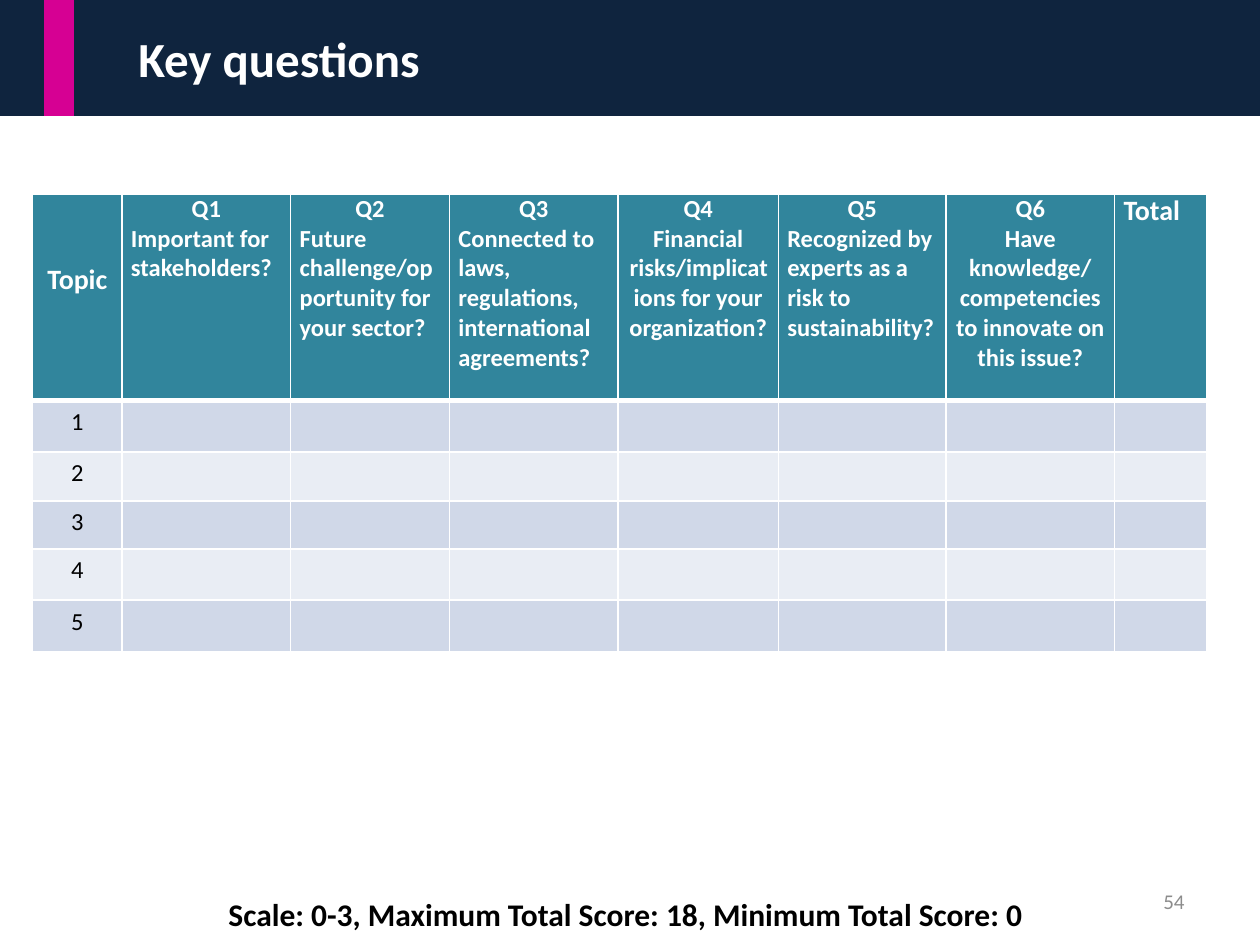
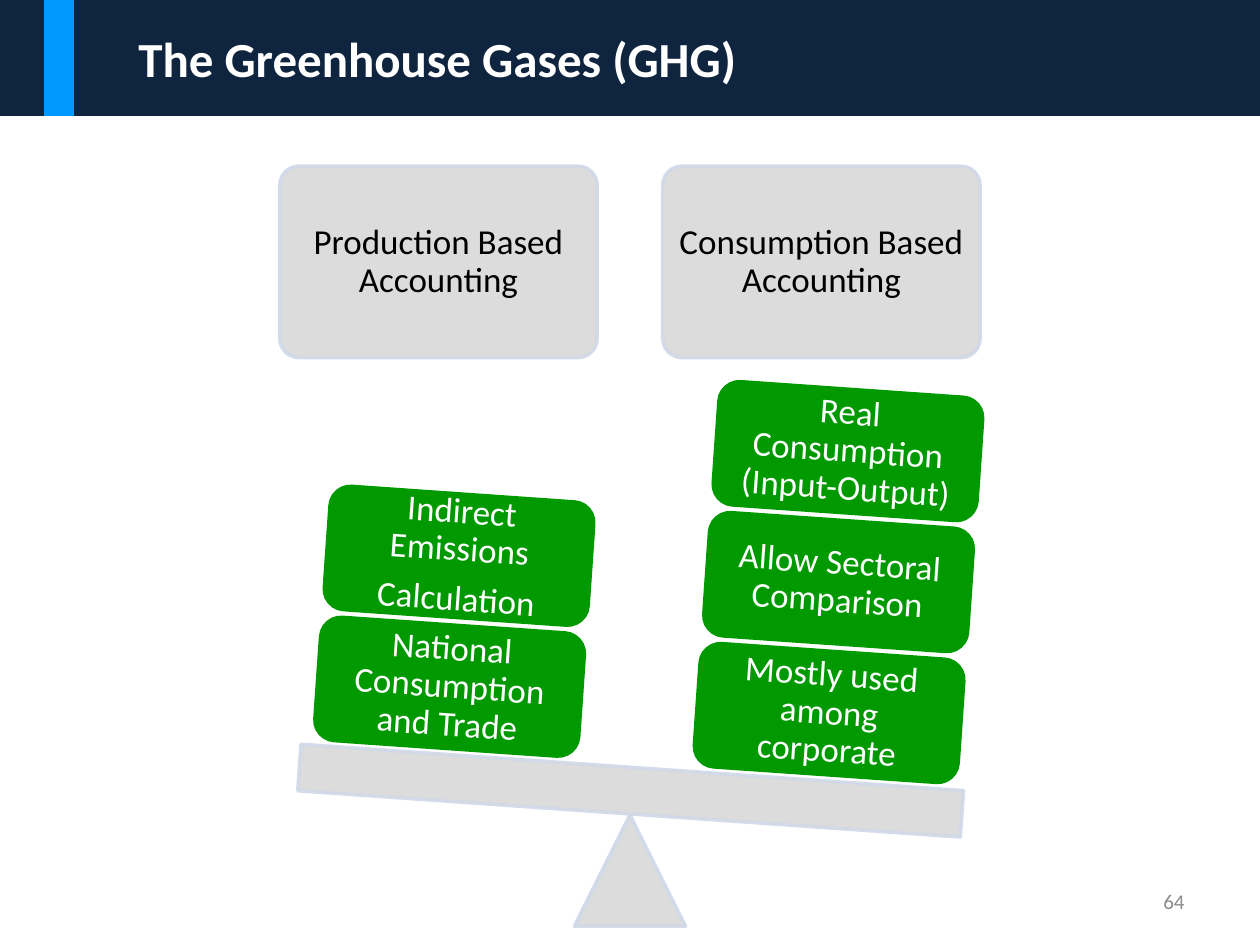
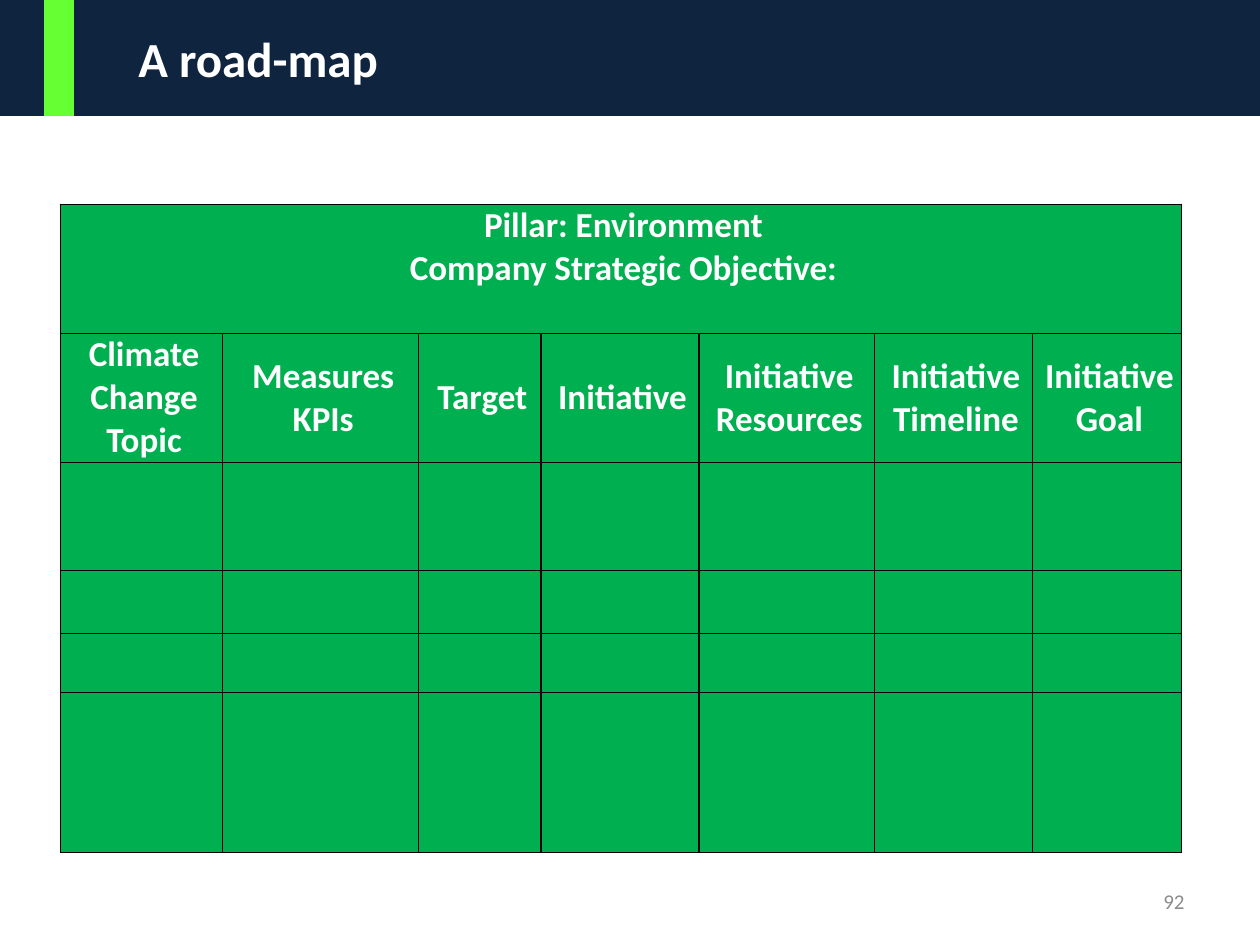
from lxml import etree
from pptx import Presentation
from pptx.dml.color import RGBColor
from pptx.enum.shapes import MSO_SHAPE
from pptx.enum.text import MSO_ANCHOR, PP_ALIGN
from pptx.oxml.ns import qn
from pptx.util import Cm, Pt

RECT = MSO_SHAPE.RECTANGLE
ROUNDED = MSO_SHAPE.ROUNDED_RECTANGLE
TRIANGLE = MSO_SHAPE.ISOSCELES_TRIANGLE
LEFT, CENTER, RIGHT = PP_ALIGN.LEFT, PP_ALIGN.CENTER, PP_ALIGN.RIGHT
TOP, MIDDLE = MSO_ANCHOR.TOP, MSO_ANCHOR.MIDDLE

FONT = "Calibri"
WHITE = RGBColor(0xFF, 0xFF, 0xFF)
BLACK = RGBColor(0x00, 0x00, 0x00)
NAVY = RGBColor(0x0F, 0x24, 0x3E)
GREY_TEXT = RGBColor(0x8C, 0x8C, 0x8C)
MAGENTA = RGBColor(0xD6, 0x00, 0x93)
SKY = RGBColor(0x00, 0x99, 0xFF)
LIME = RGBColor(0x66, 0xFF, 0x33)
TEAL = RGBColor(0x31, 0x85, 0x9C)
BAND_DARK = RGBColor(0xD0, 0xD8, 0xE8)
BAND_LIGHT = RGBColor(0xE9, 0xED, 0xF4)
SCALE_GREY = RGBColor(0xD9, 0xD9, 0xD9)
BLOCK_GREEN = RGBColor(0x00, 0x99, 0x00)
ROADMAP_GREEN = RGBColor(0x00, 0xB0, 0x50)

SLIDE_W, SLIDE_H = 25.4, 19.05
BAND_H = 2.34
TILT = 4


# Text and shapes
def write(frame, lines, size, color, bold=False, aligns=(CENTER,)):
    """Fill a frame; the last alignment carries on to the remaining lines."""
    frame.word_wrap = True
    for i, line in enumerate(lines):
        paragraph = frame.paragraphs[0] if i == 0 else frame.add_paragraph()
        paragraph.text = line
        paragraph.alignment = aligns[min(i, len(aligns) - 1)]
        font = paragraph.font
        font.name, font.size, font.bold = FONT, Pt(size), bold
        font.color.rgb = color


def set_margins(target, left, top, right, bottom):
    target.margin_left, target.margin_top = Cm(left), Cm(top)
    target.margin_right, target.margin_bottom = Cm(right), Cm(bottom)


def add_label(slide, box, text, size, color, bold=False, align=CENTER, anchor=TOP):
    frame = slide.shapes.add_textbox(*map(Cm, box)).text_frame
    frame.vertical_anchor = anchor
    write(frame, [text], size, color, bold, [align])


def add_solid(slide, kind, box, fill, line=None):
    shape = slide.shapes.add_shape(kind, *map(Cm, box))
    shape.shadow.inherit = False
    shape.fill.solid()
    shape.fill.fore_color.rgb = fill
    if line is None:
        shape.line.fill.background()
    else:
        shape.line.color.rgb = line
        shape.line.width = Pt(2)
    return shape


def add_scale_part(slide, kind, box):
    part = add_solid(slide, kind, box, SCALE_GREY, BAND_DARK)
    for color in part._element.spPr.iter(qn("a:srgbClr")):
        etree.SubElement(color, qn("a:alpha"), val="90000")
    return part


def write_in_block(block, lines, color):
    frame = block.text_frame
    frame.vertical_anchor = MIDDLE
    set_margins(frame, 0.2, 0.2, 0.2, 0.2)
    write(frame, lines, 20, color)
    for paragraph in frame.paragraphs:
        paragraph.line_spacing = 0.9
        paragraph.space_after = Pt(7)


# Tables
def add_grid(slide, left, top, widths, heights):
    frame = slide.shapes.add_table(len(heights), len(widths), Cm(left), Cm(top),
                                   Cm(sum(widths)), Cm(sum(heights)))
    table = frame.table
    table.first_row = table.horz_banding = False
    for column, width in zip(table.columns, widths):
        column.width = Cm(width)
    for row, height in zip(table.rows, heights):
        row.height = Cm(height)
    return table


def style_cell(cell, fill, border, top=1, bottom=1):
    properties = cell._tc.get_or_add_tcPr()
    for side, width in (("L", 1), ("R", 1), ("T", top), ("B", bottom)):
        line = etree.SubElement(properties, qn(f"a:ln{side}"), w=str(Pt(width)))
        paint = etree.SubElement(line, qn("a:solidFill"))
        etree.SubElement(paint, qn("a:srgbClr"), val=str(border))
    cell.fill.solid()
    cell.fill.fore_color.rgb = fill


# Shared slide frame
def add_framed_slide(prs, title, accent, number):
    slide = prs.slides.add_slide(prs.slide_layouts[6])
    band = add_solid(slide, RECT, (0, 0, SLIDE_W, BAND_H), NAVY)
    band.text_frame.vertical_anchor = MIDDLE
    band.text_frame.margin_left = Cm(2.79)
    write(band.text_frame, [title], 28, WHITE, True, [LEFT])
    add_solid(slide, RECT, (0.89, 0, 0.6, BAND_H), accent)
    add_label(slide, (18.21, 17.65, 5.92, 1.02), number, 12, GREY_TEXT,
              align=RIGHT, anchor=MIDDLE)
    return slide


# Slides
def build_key_questions(prs):
    slide = add_framed_slide(prs, "Key questions", MAGENTA, "54")
    questions = [
        ("Important for stakeholders?", LEFT),
        ("Future challenge/opportunity for your sector?", LEFT),
        ("Connected to laws, regulations, international agreements?", LEFT),
        ("Financial risks/implications for your organization?", CENTER),
        ("Recognized by experts as a risk to sustainability?", LEFT),
        ("Have knowledge/ competencies to innovate on this issue?", CENTER),
    ]
    table = add_grid(slide, 0.66, 3.91,
                     [1.8, 3.4, 3.2, 3.4, 3.23, 3.38, 3.4, 1.85],
                     [4.17, 1.03, 0.99, 0.97, 1.03, 1.04])
    for r, row in enumerate(table.rows):
        fill = TEAL if r == 0 else BAND_DARK if r % 2 else BAND_LIGHT
        for cell in row.cells:
            style_cell(cell, fill, WHITE, top=3 if r == 1 else 1,
                       bottom=3 if r == 0 else 1)
            set_margins(cell, 0.18, 0.13 if r else 0, 0.18, 0)
        if r:
            write(row.cells[0].text_frame, [str(r)], 14, BLACK)

    # Header row
    header = table.rows[0].cells
    header[0].margin_top = Cm(1.38)
    write(header[0].text_frame, ["Topic"], 16, WHITE, True)
    for i, (question, align) in enumerate(questions, 1):
        write(header[i].text_frame, [f"Q{i}", question], 14, WHITE, True,
              [CENTER, align])
    write(header[7].text_frame, ["Total"], 16, WHITE, True, [LEFT])

    add_label(slide, (3.51, 17.91, 18.21, 1.02),
              "Scale: 0-3, Maximum Total Score: 18, Minimum Total Score: 0",
              18, BLACK, True)


def build_greenhouse_gases(prs):
    slide = add_framed_slide(prs, "The Greenhouse Gases (GHG)", SKY, "64")
    # Approach, its left edge, bottom block position, blocks from the bottom up
    sides = [
        ("Production Based Accounting", 5.64, (6.4, 12.6),
         [["National Consumption and Trade"],
          ["Indirect Emissions", "Calculation"]]),
        ("Consumption Based Accounting", 13.36, (14.05, 13.13),
         [["Mostly used among corporate"],
          ["Allow Sectoral Comparison"],
          ["Real Consumption (Input-Output)"]]),
    ]
    add_scale_part(slide, TRIANGLE, (11.58, 16.43, 2.24, 2.24))
    beam = add_scale_part(slide, RECT, (6.02, 15.47, 13.39, 0.94))
    beam.rotation = TILT
    for approach, approach_left, (left, top), arguments in sides:
        heading = add_scale_part(slide, ROUNDED, (approach_left, 3.35, 6.4, 3.86))
        heading.adjustments[0] = 0.1
        write_in_block(heading, [approach], BLACK)
        for level, lines in enumerate(arguments):
            box = (left + 0.19 * level, top - 2.64 * level, 5.33, 2.49)
            block = add_solid(slide, ROUNDED, box, BLOCK_GREEN, BLOCK_GREEN)
            block.rotation = TILT
            write_in_block(block, lines, WHITE)


def build_road_map(prs):
    slide = add_framed_slide(prs, "A road-map", LIME, "92")
    headings = [["Climate Change Topic"], ["Measures", "KPIs"], ["Target"],
                ["Initiative"], ["Initiative", "Resources"],
                ["Initiative", "Timeline"], ["Initiative Goal"]]
    table = add_grid(slide, 1.22, 4.12,
                     [3.27, 3.95, 2.47, 3.18, 3.54, 3.18, 3.01],
                     [2.6, 2.6, 2.18, 1.27, 1.19, 3.23])
    for cell in table.iter_cells():
        style_cell(cell, ROADMAP_GREEN, BLACK)
        set_margins(cell, 0.1, 0, 0, 0)
    pillar = table.cell(0, 0)
    pillar.merge(table.cell(0, len(headings) - 1))
    write(pillar.text_frame,
          ["Pillar: Environment", "Company Strategic Objective:"], 20, WHITE, True)
    for cell, lines in zip(table.rows[1].cells, headings):
        cell.vertical_anchor = MIDDLE
        write(cell.text_frame, lines, 20, WHITE, True)


def main():
    prs = Presentation()
    prs.slide_width, prs.slide_height = Cm(SLIDE_W), Cm(SLIDE_H)
    build_key_questions(prs)
    build_greenhouse_gases(prs)
    build_road_map(prs)
    prs.save("out.pptx")


if __name__ == "__main__":
    main()
